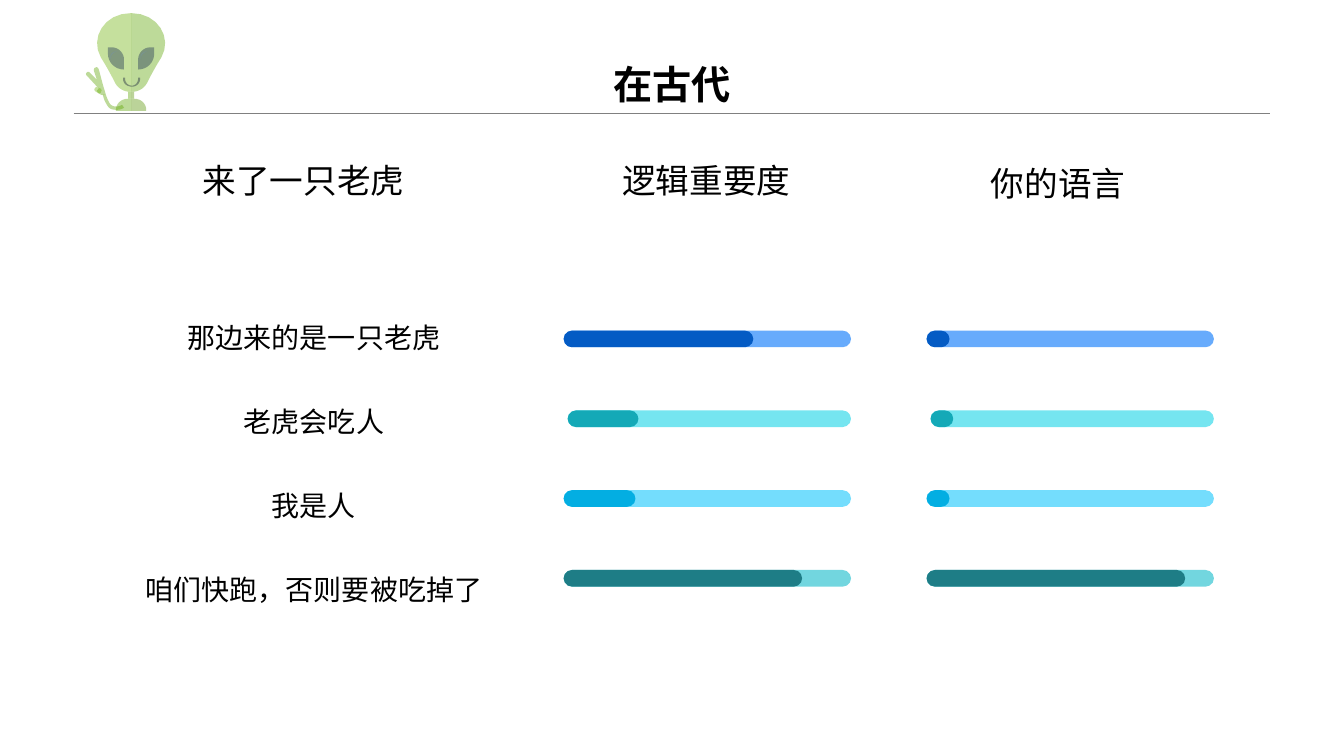
import pptx
import pptx.util
import pptx.dml.color
import pptx.enum.lang
import pptx.enum.shapes
import pptx.enum.text
import pptx.oxml
import pptx.oxml.ns

SLIDE_W, SLIDE_H = pptx.util.Inches(13.33), pptx.util.Inches(7.5)
CENTER = pptx.enum.text.PP_ALIGN.CENTER
CHINESE = pptx.enum.lang.MSO_LANGUAGE_ID.SIMPLIFIED_CHINESE
SHAPES = pptx.enum.shapes.MSO_SHAPE

COLORS = {
    "text": "000000", "rule": "808080",
    "skin": "5CA300", "skin_light": "6EB20B", "skin_dark": "569300",
    "eye": "1A2C51", "glint": "7492B5", "smile": "121A35",
}
# Track colour, filled colour, left inset as a share of the meter width
BAR_ROWS = [
    ("67ABFC", "045BC4", 0), ("75E5F0", "14A9B7", 0.014),
    ("74DDFD", "03AEE2", 0), ("72D6DF", "1E7D86", 0),
]
SENTENCES = ["那边来的是一只老虎", "老虎会吃人", "我是人", "咱们快跑，否则要被吃掉了"]
# Heading and its box in percent of the slide
HEADINGS = [
    ("来了一只老虎", (13.13, 20.53, 18.9, 6.67)),
    ("逻辑重要度", (44.56, 20.53, 15.98, 6.67)),
    ("你的语言", (70.74, 20.93, 15.98, 6.67)),
]
# Left edge in percent, and filled share of each row
METERS = [(41.94, (0.66, 0.25, 0.25, 0.83)), (68.94, (0.08, 0.08, 0.08, 0.9))]

# Mascot outlines on an 86 x 97 grid: pairs are corners, sixes are curves
MASCOT_GRID, MASCOT_AXIS = 86, 45
HEAD = [(45, 0), (18, 0, 4, 25, 15, 44), (20, 52, 24, 59, 28, 67),
        (31, 74, 36, 77, 42, 78), (45, 78)]
NECK = [(42, 78), (45, 78), (45, 85), (42, 85)]
SHOULDER = [(42, 85), (35, 85, 30, 90, 30, 96), (30, 97), (45, 97), (45, 85)]
HAND = [(17, 71), (13, 56), (12, 54, 11, 53, 10, 54), (9, 54, 8, 55, 8, 57),
        (11, 66), (4, 59), (3, 58, 2, 58, 1, 59), (0, 60, 0, 61, 1, 62),
        (13, 75), (11, 77), (12, 79), (14, 81, 17, 82, 19, 81), (20, 81)]
EYE = [(38, 56), (29, 56, 22, 49, 22, 40), (22, 34), (26, 34), (33, 34, 38, 40, 38, 46)]
SMILE = [(46, 73), (41, 73, 37, 70, 37, 65), (37, 64), (39, 64), (39, 65),
         (39, 69, 42, 72, 46, 72), (49, 72, 52, 69, 52, 65), (52, 64), (54, 64),
         (54, 65), (54, 70, 50, 73, 46, 73)]
THUMB = [(15, 78), (15, 79), (15, 79, 13, 80, 12, 79), (10, 78), (9, 77, 8, 76, 9, 75),
         (10, 73, 11, 73, 12, 74), (15, 75), (16, 76, 16, 78, 15, 78)]
ARM = [(30, 96), (26, 96, 23, 95, 21, 91), (18, 87, 17, 81, 17, 81), (20, 81),
       (20, 81, 21, 85, 24, 90), (27, 94, 33, 93, 36, 91), (38, 94), (35, 96, 32, 96, 30, 96)]
GLINT = [(25, 46), (23, 42, 26, 38, 31, 38), (27, 39, 24, 42, 25, 46)]
# Outline, colour, mirrored, shift to the right
MASCOT = [
    (NECK, "skin", False, 0), (NECK, "skin_dark", True, 0),
    (HEAD, "skin_light", False, 0), (HEAD, "skin", True, 0),
    (SHOULDER, "skin", False, 0), (SHOULDER, "skin_dark", True, 0),
    (HAND, "skin", False, 0), (EYE, "eye", False, 0), (EYE, "eye", True, 0),
    (SMILE, "smile", False, 0), (THUMB, "skin_light", False, 0), (ARM, "skin", False, 0),
    (GLINT, "glint", False, 0), (GLINT, "glint", False, 30),
]


def percent(left, top, width, height):
    """Turn percentages of the slide into a box."""
    return (int(SLIDE_W * left / 100), int(SLIDE_H * top / 100),
            int(SLIDE_W * width / 100), int(SLIDE_H * height / 100))


def rgb(color):
    return pptx.dml.color.RGBColor.from_string(color)


def paint(part, color):
    part.fill.solid()
    part.fill.fore_color.rgb = rgb(color)
    part.line.fill.background()
    part.shadow.inherit = False


def write(frame, lines, size, bold=False, spacing=None):
    """Fill a text frame with centred paragraphs."""
    frame.word_wrap = True
    formats = {"size": pptx.util.Pt(size), "name": "Arial", "bold": bold, "language_id": CHINESE}
    for index, line in enumerate(lines):
        paragraph = frame.paragraphs[0] if index == 0 else frame.add_paragraph()
        paragraph.alignment = CENTER
        paragraph.line_spacing = spacing
        run = paragraph.add_run()
        run.text = line
        for key, value in formats.items():
            setattr(run.font, key, value)
        run.font.color.rgb = rgb(COLORS["text"])
        east_asian = pptx.oxml.parse_xml(
            f'<a:ea {pptx.oxml.ns.nsdecls("a")} typeface="Arial"/>')
        run.font._element.append(east_asian)


def trace(outline, steps=8):
    """Sample the corners and Bezier curves of an outline."""
    points = [outline[0]]
    for segment in outline[1:]:
        if len(segment) == 2:
            points.append(segment)
            continue
        x0, y0 = points[-1]
        x1, y1, x2, y2, x3, y3 = segment
        for step in range(1, steps + 1):
            t = step / steps
            a, b, c, d = (1 - t) ** 3, 3 * t * (1 - t) ** 2, 3 * t * t * (1 - t), t ** 3
            points.append((a * x0 + b * x1 + c * x2 + d * x3,
                           a * y0 + b * y1 + c * y2 + d * y3))
    return points


def add_mascot(slide, box):
    left, top, width, _ = box
    fine = 100
    for outline, color, mirrored, shift in MASCOT:
        points = [(((2 * MASCOT_AXIS - x) if mirrored else x + shift) * fine, y * fine)
                  for x, y in trace(outline)]
        builder = slide.shapes.build_freeform(*points[0], scale=width / MASCOT_GRID / fine)
        builder.add_line_segments(points[1:], close=True)
        part = builder.convert_to_shape(left, top)
        paint(part, COLORS[color])
        tint = part.fill._xPr.find(".//" + pptx.oxml.ns.qn("a:srgbClr"))
        tint.append(pptx.oxml.parse_xml(
            f'<a:alpha {pptx.oxml.ns.nsdecls("a")} val="40000"/>'))


def add_title(slide, box, text):
    left, top, width, height = box
    # Rule under the title
    rule = slide.shapes.add_connector(
        pptx.enum.shapes.MSO_CONNECTOR.STRAIGHT, left, top + height, left + width, top + height)
    rule.line.color.rgb = rgb(COLORS["rule"])
    rule.line.width = pptx.util.Pt(0.25)
    rule._element.spPr.append(pptx.oxml.parse_xml(
        f'<a:effectLst {pptx.oxml.ns.nsdecls("a")}/>'))
    # Title text
    title = slide.shapes.title
    for key, value in zip(("left", "top", "width", "height"), box):
        setattr(title, key, value)
    title.text_frame.vertical_anchor = pptx.enum.text.MSO_ANCHOR.BOTTOM
    title.text_frame.auto_size = pptx.enum.text.MSO_AUTO_SIZE.NONE
    write(title.text_frame, [text], 28, bold=True, spacing=0.9)


def add_text(slide, box, lines, size, spacing=None):
    write(slide.shapes.add_textbox(*box).text_frame, lines, size, spacing=spacing)


def add_meters(slide, box, shares):
    """Stack one progress bar per sentence."""
    left, top, width, height = box
    bar_height = height * 0.065
    pitch = (height - bar_height) / (len(shares) - 1)
    for row, ((track, filled, inset), share) in enumerate(zip(BAR_ROWS, shares)):
        start, length = left + width * inset, width * (1 - inset)
        for color, part in ((track, 1), (filled, share)):
            bar = slide.shapes.add_shape(
                SHAPES.ROUNDED_RECTANGLE, int(start), int(top + row * pitch),
                int(length * part), int(bar_height))
            bar.adjustments[0] = 0.5
            paint(bar, color)


def main():
    deck = pptx.Presentation()
    deck.slide_width, deck.slide_height = SLIDE_W, SLIDE_H
    slide = deck.slides.add_slide(deck.slide_layouts[5])
    add_title(slide, percent(5.48, 0, 89.05, 14.93), "在古代")
    add_mascot(slide, percent(6.38, 1.73, 6.45, 12.93))
    add_text(slide, percent(6.3, 35.07, 34.13, 44.27), SENTENCES, 20, pptx.util.Pt(60))
    for heading, place in HEADINGS:
        add_text(slide, percent(*place), [heading], 24)
    for left, shares in METERS:
        add_meters(slide, percent(left, 43.73, 21.38, 33.87), shares)
    deck.save("out.pptx")


if __name__ == "__main__":
    main()
